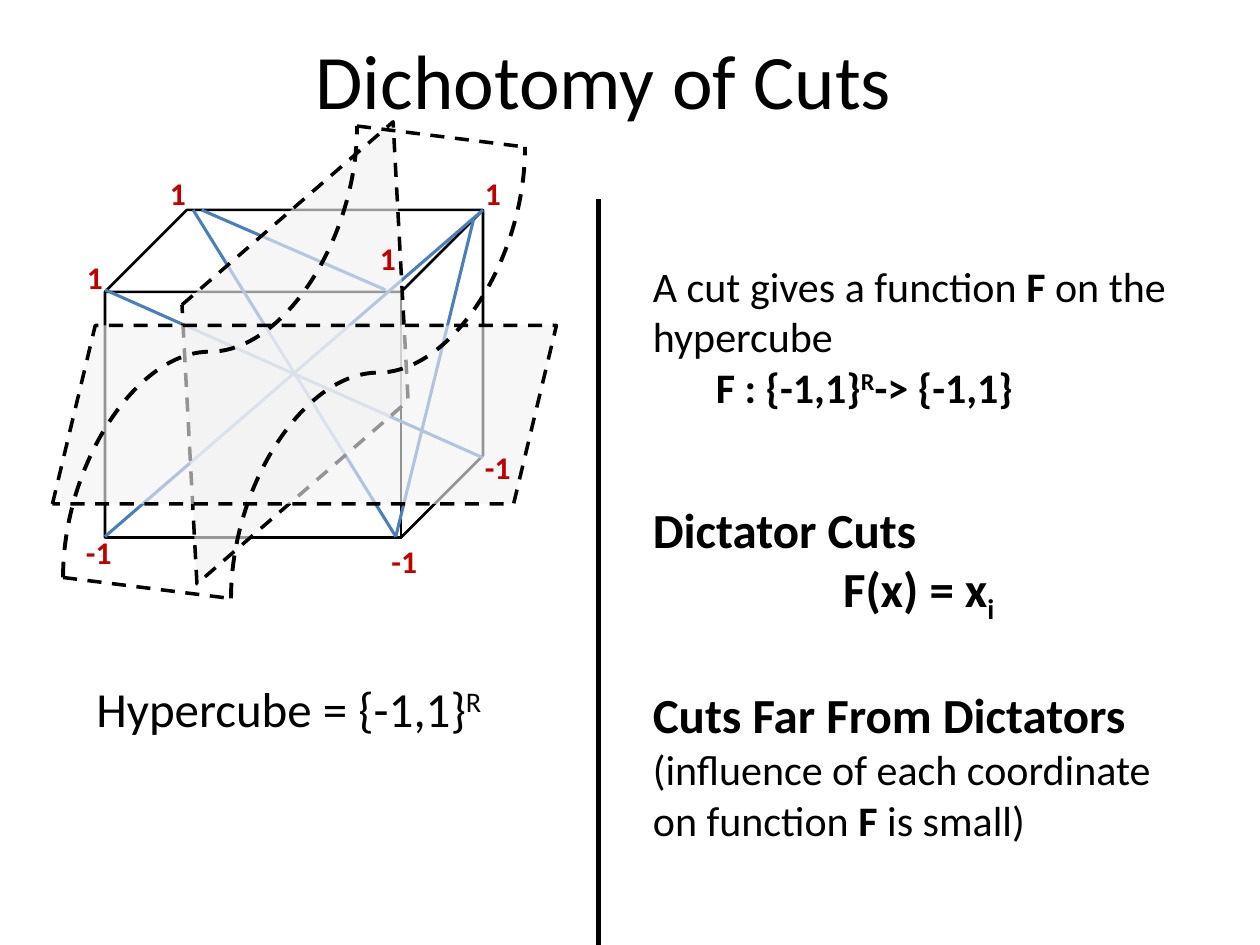
import pptx
import pptx.util
import pptx.dml.color
import pptx.enum.dml
import pptx.enum.shapes
import pptx.enum.text
from lxml import etree
from pptx.oxml.ns import qn

rgb = pptx.dml.color.RGBColor.from_string
Pt = pptx.util.Pt
SHAPE = pptx.enum.shapes.MSO_SHAPE
LINK = pptx.enum.shapes.MSO_CONNECTOR
ALIGN = pptx.enum.text.PP_ALIGN

prs = pptx.Presentation()
prs.slide_width, prs.slide_height = pptx.util.Inches(10), pptx.util.Inches(7.5)
u = prs.slide_width // 120  # grid of 120 columns by 90 rows
s = prs.slides.add_slide(prs.slide_layouts[5])


def add_run(p, text, size=24, bold=False, color="000000", base=0):
    r = p.add_run()
    r.text = text
    r.font.name, r.font.size, r.font.bold = "Calibri", Pt(size), bold
    r.font.color.rgb = rgb(color)
    if base:
        r.font._element.set("baseline", str(base * 1000))


def set_line(sp, width, color="000000", dash=False):
    sp.line.color.rgb = rgb(color)
    sp.line.width = Pt(width)
    if dash:
        sp.line.dash_style = pptx.enum.dml.MSO_LINE.DASH
    etree.SubElement(sp._element.spPr, qn("a:effectLst"))


# Title
title = s.shapes.title
title.left, title.top, title.width, title.height = 2 * u, 0, 111 * u, 15 * u
title.text_frame.vertical_anchor = pptx.enum.text.MSO_ANCHOR.MIDDLE
p = title.text_frame.paragraphs[0]
p.alignment = ALIGN.CENTER
add_run(p, "Dichotomy of Cuts", size=44)

# Hypercube with its diagonals
group = s.shapes.add_group_shape()
cube = group.shapes.add_shape(SHAPE.CUBE, 10 * u, 20 * u, 36 * u, int(31.2 * u))
cube.fill.background()
set_line(cube, 1.5)
diagonals = [(10, 27.6, 46, 43.6), (19.2, 20, 36.7, 27.6), (18.4, 20, 37.7, 51.1),
             (46, 20, 10, 51.1), (45.1, 20.9, 37.7, 51.1)]
for ends in diagonals:
    c = group.shapes.add_connector(LINK.STRAIGHT, *[int(v * u) for v in ends])
    set_line(c, 1.75, "4B7EBC")

# Divider between the columns
set_line(s.shapes.add_connector(LINK.STRAIGHT, 57 * u, 19 * u, 57 * u, 90 * u), 2.5)

# Flat cuts: translucent planes
planes = [(SHAPE.DIAMOND, (16.4, 9.7, 23.4, 47.8), 23, 63),
          (SHAPE.PARALLELOGRAM, (5, 31, 48, 17), 0, 61)]
for kind, at, angle, alpha in planes:
    sp = s.shapes.add_shape(kind, *[int(v * u) for v in at])
    sp.rotation = angle
    sp.fill.solid()
    sp.fill.fore_color.rgb = rgb("F2F2F2")
    color = sp._element.spPr.find(qn("a:solidFill"))[0]
    etree.SubElement(color, qn("a:alpha")).set("val", str(alpha * 1000))
    set_line(sp, 2, dash=True)
sp.adjustments[0] = 0.24

# Curved cut: two S-curves, each a quarter turn of a 43 by 28 box
for left, top in [(-1.5, 19.5), (14.5, 21.5)]:
    ends = (left + 43, top + 28, left, top)
    c = s.shapes.add_connector(LINK.CURVE, *[int(v * u) for v in ends])
    c._element.spPr.find(qn("a:xfrm")).set("rot", str(90 * 60000))
    set_line(c, 2.25, dash=True)
for x, y in [(34, 12), (6, 55)]:
    c = s.shapes.add_connector(LINK.STRAIGHT, x * u, y * u, (x + 16) * u, (y + 2) * u)
    set_line(c, 2, dash=True)

# Text boxes: place, wrap, paragraphs of (alignment, space before, runs)
bold, big, head = dict(bold=True), dict(size=28), dict(size=28, bold=True)
texts = [
    ((61, 47, 53, 33.5), True, [
        (ALIGN.LEFT, 0, [("Dictator Cuts", head)]),
        (ALIGN.CENTER, 0, [("F(x) = x", head), ("i", dict(head, base=-25))]),
        (ALIGN.LEFT, 34, [("Cuts Far From Dictators", head)]),
        (ALIGN.LEFT, 0, [("(influence of each coordinate on function ", {}),
                         ("F", bold), (" is small)", {})])]),
    ((61, 24.2, 52, 15.7), True, [
        (ALIGN.LEFT, 0, [("A cut gives a function ", {}), ("F", bold),
                         (" on the hypercube", {})]),
        (ALIGN.LEFT, 0, [("\tF : {-1,1}", bold), ("R", dict(bold, base=30)),
                         ("-> {-1,1}", bold)])]),
    ((8, 64, 39.7, 6.9), False, [
        (ALIGN.LEFT, 0, [("Hypercube = {-1,1}", big), ("R", dict(big, base=30))])]),
]

# Vertex labels
label = dict(size=18, bold=True, color="C00000")
vertices = [("1", 7.1, 24), ("1", 15, 16), ("1", 45, 16), ("1", 35, 22.2),
            ("-1", 7, 50.2), ("-1", 36.1, 51), ("-1", 45, 42.1)]
for value, x, y in vertices:
    width = 4 if value == "1" else 4.9
    texts.append(((x, y, width, 4.8), False, [(ALIGN.LEFT, 0, [(value, label)])]))

for at, wrap, paragraphs in texts:
    tf = s.shapes.add_textbox(*[int(v * u) for v in at]).text_frame
    tf.word_wrap = wrap
    tf.auto_size = pptx.enum.text.MSO_AUTO_SIZE.SHAPE_TO_FIT_TEXT
    for i, (align, before, runs) in enumerate(paragraphs):
        p = tf.add_paragraph() if i else tf.paragraphs[0]
        p.alignment, p.space_before = align, Pt(before)
        for text, fmt in runs:
            add_run(p, text, **fmt)

prs.save("out.pptx")
